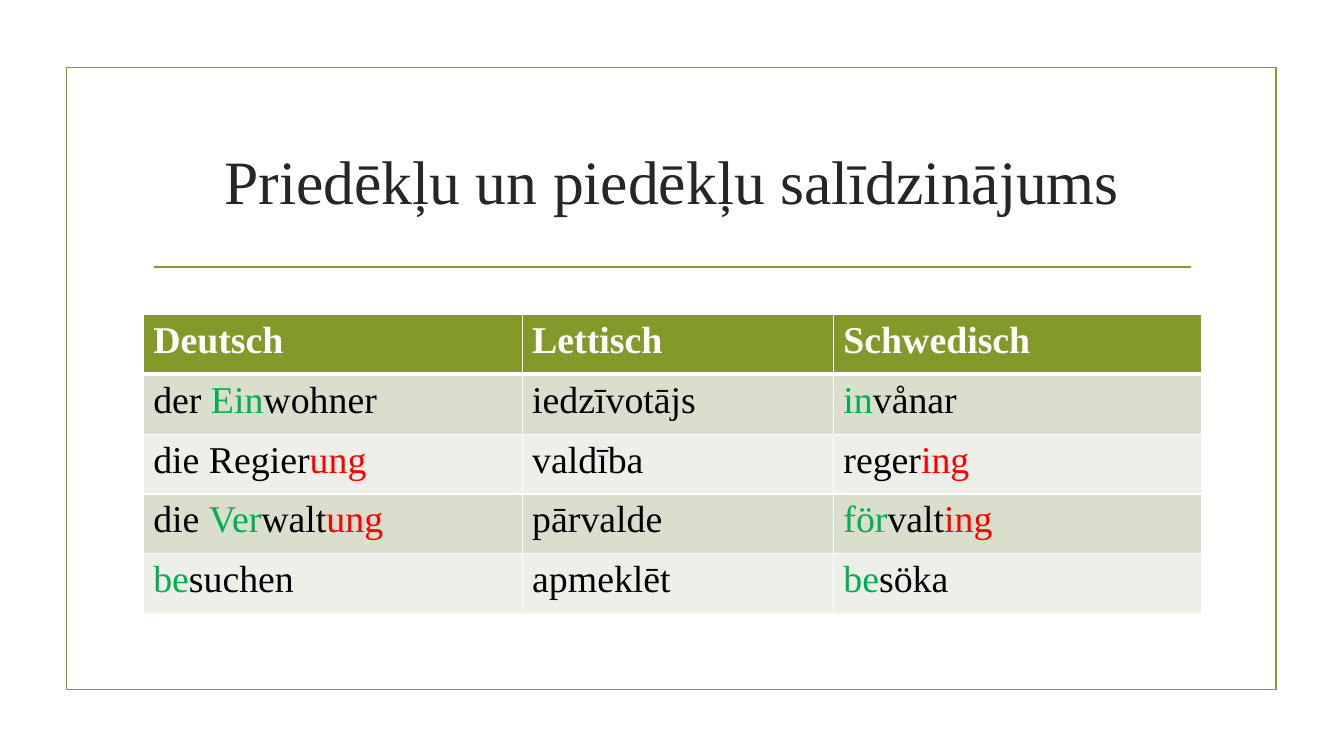
from lxml import etree
from pptx import Presentation
from pptx import util as u
from pptx.dml.color import RGBColor
from pptx.enum import shapes, text
from pptx.oxml.ns import qn

OLIVE = RGBColor(0x83, 0x99, 0x2A)
TITLE_INK = RGBColor(0x26, 0x26, 0x26)
WHITE = RGBColor(0xFF, 0xFF, 0xFF)
BAND_DARK = RGBColor(0xD9, 0xDE, 0xCD)
BAND_LIGHT = RGBColor(0xED, 0xEF, 0xE8)
STEM = RGBColor(0, 0, 0)
PREFIX = RGBColor(0x00, 0xB0, 0x50)
SUFFIX = RGBColor(0xFF, 0, 0)

SLIDE_SIZE = (13.33, 7.5)
FRAME_BOX = (0.66, 0.67, 12, 6.17)
TITLE_BOX = (1.42, 1.07, 10.5, 1.43)
RULE_BOX = (1.53, 2.65, 10.28, 0)
TABLE_BOX = (1.42, 3.12, 10.5, 2.97)
COLUMN_SHARES = (0.358, 0.294, 0.348)

TITLE_FORMAT = {"name": "Times New Roman", "size": u.Pt(44)}
HEADER_FORMAT = {"name": "Times New Roman", "size": u.Pt(27), "bold": True}
WORD_FORMAT = {**HEADER_FORMAT, "bold": False}

LANGUAGES = ("Deutsch", "Lettisch", "Schwedisch")
WORDS = (
    ([("der ", STEM), ("Ein", PREFIX), ("wohner", STEM)],
     [("iedzīvotājs", STEM)],
     [("in", PREFIX), ("vånar", STEM)]),
    ([("die Regier", STEM), ("ung", SUFFIX)],
     [("valdība", STEM)],
     [("reger", STEM), ("ing", SUFFIX)]),
    ([("die ", STEM), ("Ver", PREFIX), ("walt", STEM), ("ung", SUFFIX)],
     [("pārvalde", STEM)],
     [("för", PREFIX), ("valt", STEM), ("ing", SUFFIX)]),
    ([("be", PREFIX), ("suchen", STEM)],
     [("apmeklēt", STEM)],
     [("be", PREFIX), ("söka", STEM)]),
)


def inches(box):
    return [u.Inches(length) for length in box]


def add_run(paragraph, wording, color, font_format):
    run = paragraph.add_run()
    run.text = wording
    for key, value in font_format.items():
        setattr(run.font, key, value)
    run.font.color.rgb = color


def style_line(line):
    line.color.rgb = OLIVE
    line.width = u.Pt(1.25)


def add_frame(slide, box):
    frame = slide.shapes.add_shape(shapes.MSO_SHAPE.RECTANGLE, *inches(box))
    frame.shadow.inherit = False
    frame.fill.background()
    style_line(frame.line)


def add_rule(slide, box):
    left, top, width, height = inches(box)
    rule = slide.shapes.add_connector(
        shapes.MSO_CONNECTOR.STRAIGHT, left, top, left + width, top + height)
    style_line(rule.line)
    etree.SubElement(rule._element.spPr, qn("a:effectLst"))


def fill_title(slide, box):
    title = slide.shapes.title
    title.left, title.top, title.width, title.height = inches(box)
    title.text_frame.vertical_anchor = text.MSO_ANCHOR.MIDDLE
    paragraph = title.text_frame.paragraphs[0]
    paragraph.alignment = text.PP_ALIGN.CENTER
    add_run(paragraph, "Priedēkļu un piedēkļu salīdzinājums", TITLE_INK, TITLE_FORMAT)


def set_borders(cell, widths):
    properties = cell._tc.get_or_add_tcPr()
    for index, (side, width) in enumerate(widths.items()):
        border = etree.Element(qn(f"a:{side}"), w=str(u.Pt(width)))
        fill = etree.SubElement(border, qn("a:solidFill"))
        etree.SubElement(fill, qn("a:srgbClr"), val=str(WHITE))
        properties.insert(index, border)


def add_word_table(slide, box):
    header = [[(language, WHITE)] for language in LANGUAGES]
    rows = [header, *WORDS]
    table = slide.shapes.add_table(len(rows), len(header), *inches(box)).table
    for column, share in zip(table.columns, COLUMN_SHARES):
        column.width = u.Inches(box[2] * share)

    for r, row in enumerate(rows):
        band = BAND_DARK if r % 2 else BAND_LIGHT
        for c, pieces in enumerate(row):
            cell = table.cell(r, c)
            cell.fill.solid()
            cell.fill.fore_color.rgb = band if r else OLIVE
            # A thick line parts the header from the words
            set_borders(cell, {"lnL": 1, "lnR": 1, "lnT": 3 if r == 1 else 1,
                               "lnB": 1 if r else 3})
            for wording, color in pieces:
                add_run(cell.text_frame.paragraphs[0], wording, color,
                        WORD_FORMAT if r else HEADER_FORMAT)


def build_comparison_slide(deck):
    slide = deck.slides.add_slide(deck.slide_layouts[5])
    add_frame(slide, FRAME_BOX)
    add_rule(slide, RULE_BOX)
    fill_title(slide, TITLE_BOX)
    add_word_table(slide, TABLE_BOX)


def main():
    deck = Presentation()
    deck.slide_width, deck.slide_height = inches(SLIDE_SIZE)
    build_comparison_slide(deck)
    deck.save("out.pptx")


if __name__ == "__main__":
    main()
